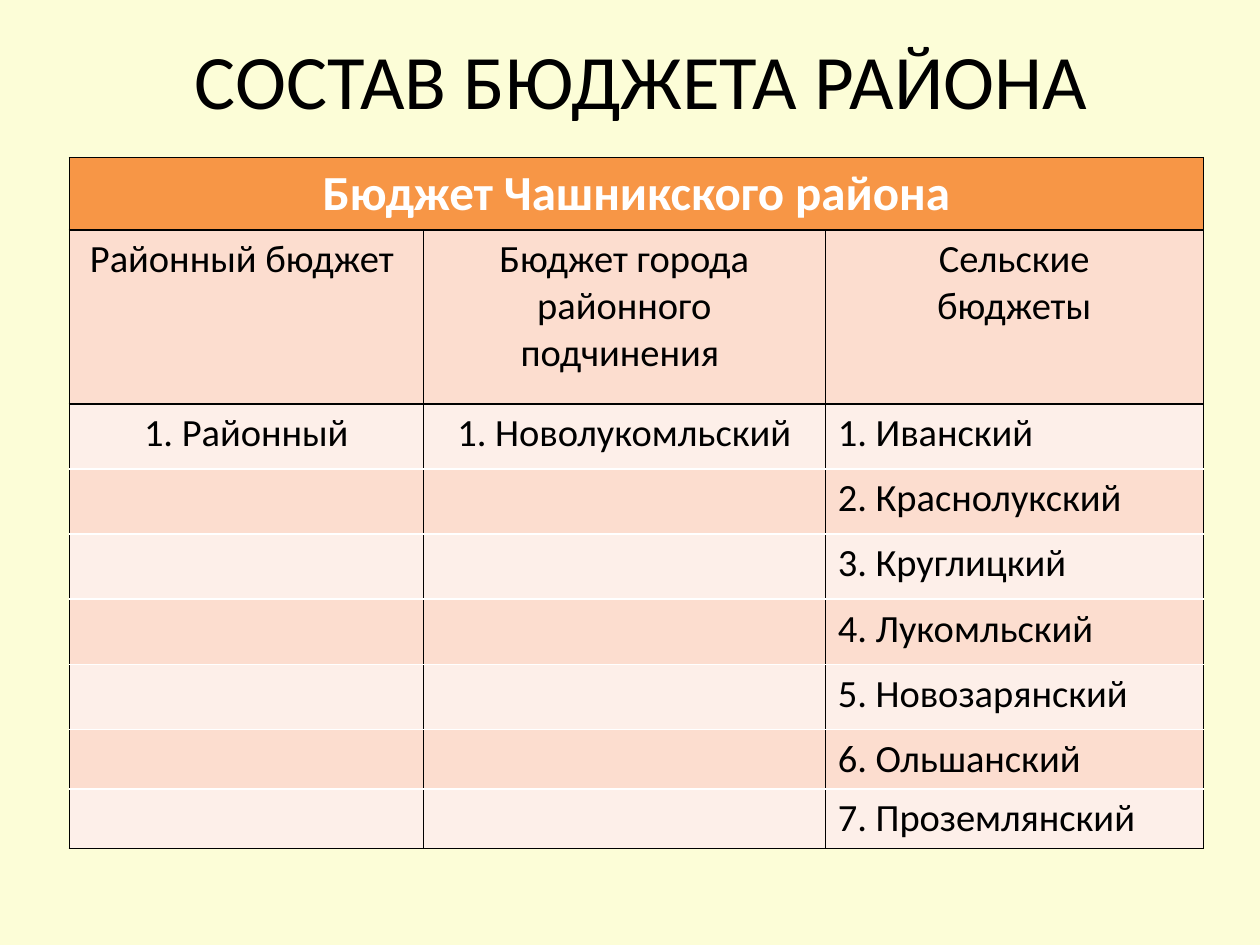
from dataclasses import dataclass

from lxml import etree
from pptx import Presentation
from pptx.dml.color import RGBColor
from pptx.enum import text
from pptx.oxml import ns
from pptx.util import Pt


@dataclass(frozen=True)
class Theme:
    font: str = "Calibri"
    background: str = "FCFDD7"
    ink: str = "000000"
    white: str = "FFFFFF"
    header: str = "F79646"
    bands: tuple = ("FDEFE9", "FCDDCF")
    title_size: int = 44
    header_size: int = 28
    body_size: int = 22


THEME = Theme()
CENTER, LEFT = text.PP_ALIGN.CENTER, text.PP_ALIGN.LEFT

COLUMN_WIDTHS = (202.3, 229.7, 216)
ROW_HEIGHTS = (41.4, 99.4) + (37.2,) * 5 + (34,) * 2
HEADER = "Бюджет Чашникского района"
BUDGET_KINDS = (
    ["Районный бюджет "],
    ["Бюджет города районного подчинения "],
    ["Сельские", "бюджеты"],
)
BUDGETS = (
    ["Районный"],
    ["Новолукомльский"],
    ["Иванский", "Краснолукский", "Круглицкий", "Лукомльский",
     "Новозарянский", "Ольшанский", "Проземлянский"],
)


def write(frame, lines, size, color=THEME.ink, bold=False, align=CENTER):
    """Write each line as one paragraph."""
    for index, line in enumerate(lines):
        paragraph = frame.add_paragraph() if index else frame.paragraphs[0]
        paragraph.alignment = align
        run = paragraph.add_run()
        run.text = line
        run.font.name = THEME.font
        run.font.size = Pt(size)
        run.font.bold = bold
        run.font.color.rgb = RGBColor.from_string(color)


def paint_cell(cell, fill, top, bottom):
    """Set the fill and borders; the side borders are always dark."""
    properties = cell._tc.get_or_add_tcPr()
    edges = {"L": THEME.ink, "R": THEME.ink, "T": top, "B": bottom}
    for side, color in edges.items():
        line = etree.SubElement(properties, ns.qn(f"a:ln{side}"), w=str(Pt(1)))
        solid = etree.SubElement(line, ns.qn("a:solidFill"))
        etree.SubElement(solid, ns.qn("a:srgbClr"), val=color)
    cell.fill.solid()
    cell.fill.fore_color.rgb = RGBColor.from_string(fill)


def add_title(slide):
    title = slide.shapes.title
    title.left, title.top, title.width, title.height = Pt(42.5), Pt(0), Pt(648), Pt(90)
    title.text_frame.vertical_anchor = text.MSO_ANCHOR.MIDDLE
    write(title.text_frame, ["СОСТАВ БЮДЖЕТА РАЙОНА"], THEME.title_size)


def add_budget_table(slide):
    table = slide.shapes.add_table(
        len(ROW_HEIGHTS), len(COLUMN_WIDTHS), Pt(39.6), Pt(90),
        Pt(sum(COLUMN_WIDTHS)), Pt(sum(ROW_HEIGHTS))).table
    for column, width in zip(table.columns, COLUMN_WIDTHS):
        column.width = Pt(width)
    last = len(ROW_HEIGHTS) - 1
    for index, (row, height) in enumerate(zip(table.rows, ROW_HEIGHTS)):
        row.height = Pt(height)
        fill = THEME.bands[index % 2] if index else THEME.header
        top = THEME.ink if index <= 2 else THEME.white
        bottom = THEME.ink if index <= 1 or index == last else THEME.white
        for cell in row.cells:
            paint_cell(cell, fill, top, bottom)

    table.cell(0, 0).merge(table.cell(0, len(COLUMN_WIDTHS) - 1))
    write(table.cell(0, 0).text_frame, [HEADER], THEME.header_size, THEME.white, bold=True)
    for column, (kind, names) in enumerate(zip(BUDGET_KINDS, BUDGETS)):
        write(table.cell(1, column).text_frame, kind, THEME.body_size)
        align = LEFT if len(names) > 1 else CENTER
        for number, name in enumerate(names, 1):
            write(table.cell(number + 1, column).text_frame, [f"{number}. {name}"],
                  THEME.body_size, align=align)


def main():
    presentation = Presentation()
    presentation.slide_width, presentation.slide_height = Pt(720), Pt(540)
    slide = presentation.slides.add_slide(presentation.slide_layouts[5])
    slide.background.fill.solid()
    slide.background.fill.fore_color.rgb = RGBColor.from_string(THEME.background)
    add_title(slide)
    add_budget_table(slide)
    presentation.save("out.pptx")


if __name__ == "__main__":
    main()
